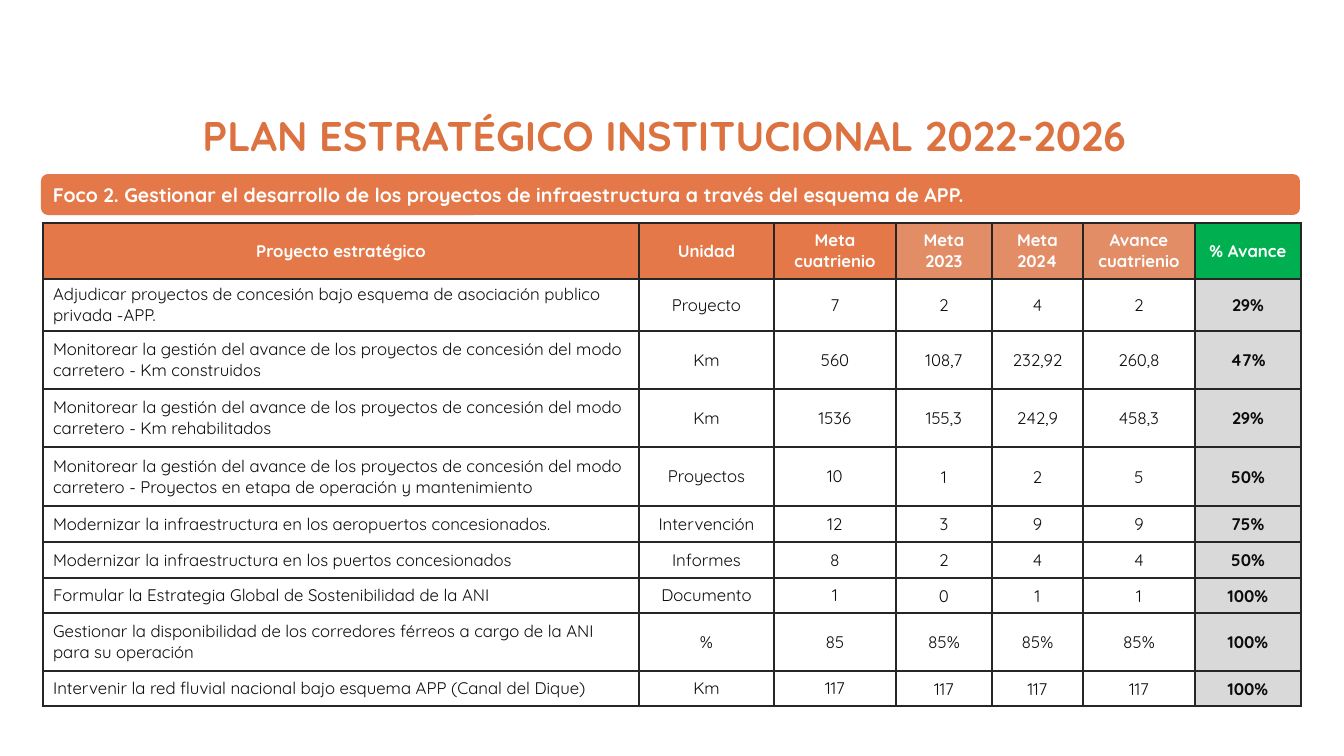
from lxml.etree import SubElement
from pptx import Presentation
from pptx.dml.color import RGBColor
from pptx.enum.shapes import MSO_SHAPE as Preset
from pptx.enum.text import MSO_ANCHOR as Anchor, MSO_AUTO_SIZE as AutoSize, PP_ALIGN as Align
from pptx.oxml.ns import qn
from pptx.util import Pt

ORANGE = RGBColor(0xE5, 0x78, 0x48)
LIGHT_ORANGE = RGBColor(0xE3, 0x8D, 0x67)
TITLE_ORANGE = RGBColor(0xDC, 0x72, 0x40)
GREEN = RGBColor(0x00, 0xB0, 0x50)
GREY = RGBColor(0xD9, 0xD9, 0xD9)
WHITE = RGBColor(0xFF, 0xFF, 0xFF)
INK = RGBColor(0x0C, 0x0C, 0x0C)
BORDER = RGBColor(0x26, 0x26, 0x26)

TITLE = "PLAN ESTRATÉGICO INSTITUCIONAL 2022-2026"
FOCUS = "Foco 2. Gestionar el desarrollo de los proyectos de infraestructura a través del esquema de APP."
COLUMNS = [
    ("Proyecto estratégico", 596, ORANGE),
    ("Unidad", 135, ORANGE),
    ("Meta cuatrienio", 122, ORANGE),
    ("Meta 2023", 96, LIGHT_ORANGE),
    ("Meta 2024", 91, LIGHT_ORANGE),
    ("Avance cuatrienio", 112, LIGHT_ORANGE),
    ("% Avance", 106, GREEN),
]
PROJECTS = [
    ("Adjudicar proyectos de concesión bajo esquema de asociación publico privada -APP.",
     "Proyecto", "7", "2", "4", "2", "29%"),
    ("Monitorear la gestión del avance de los proyectos de concesión del modo carretero - Km construidos",
     "Km", "560", "108,7", "232,92", "260,8", "47%"),
    ("Monitorear la gestión del avance de los proyectos de concesión del modo carretero - Km rehabilitados",
     "Km", "1536", "155,3", "242,9", "458,3", "29%"),
    ("Monitorear la gestión del avance de los proyectos de concesión del modo carretero - "
     "Proyectos en etapa de operación y mantenimiento",
     "Proyectos", "10", "1", "2", "5", "50%"),
    ("Modernizar la infraestructura en los aeropuertos concesionados.",
     "Intervención", "12", "3", "9", "9", "75%"),
    ("Modernizar la infraestructura en los puertos concesionados",
     "Informes", "8", "2", "4", "4", "50%"),
    ("Formular la Estrategia Global de Sostenibilidad de la ANI",
     "Documento", "1", "0", "1", "1", "100%"),
    ("Gestionar la disponibilidad de los corredores férreos a cargo de la ANI para su operación",
     "%", "85", "85%", "85%", "85%", "100%"),
    ("Intervenir la red fluvial nacional bajo esquema APP (Canal del Dique)",
     "Km", "117", "117", "117", "117", "100%"),
]
ROW_HEIGHTS = [56, 52, 58, 58, 59, 36, 36, 35, 58, 35]
TITLE_BOX = (128, 100, 1074, 77)
FOCUS_BOX = (41, 174, 1259, 41)
TABLE_CORNER = (43, 223)
FIRST_TIGHT_COLUMN = 3


def px(length):
    """Convert px to EMU."""
    return round(length * 914400 / 100.8)


def write(frame, text, size, color, bold, align):
    """Put one formatted paragraph into a text frame."""
    frame.text = text
    paragraph = frame.paragraphs[0]
    paragraph.alignment = align
    font = paragraph.runs[0].font
    for name, value in {"name": "Quicksand", "size": Pt(size), "bold": bold}.items():
        setattr(font, name, value)
    font.color.rgb = color
    return paragraph


def draw_borders(cell):
    """Give a cell a thin line on every side."""
    properties = cell._tc.get_or_add_tcPr()
    for side in ("lnL", "lnR", "lnT", "lnB"):
        line = SubElement(properties, qn(f"a:{side}"), w=str(Pt(1)))
        fill = SubElement(line, qn("a:solidFill"))
        SubElement(fill, qn("a:srgbClr"), val=str(BORDER))


def add_title(slide):
    """Place the slide title."""
    title = slide.shapes.title
    title.left, title.top, title.width, title.height = map(px, TITLE_BOX)
    frame = title.text_frame
    paragraph = write(frame, TITLE, 29.6, TITLE_ORANGE, True, Align.CENTER)
    paragraph.line_spacing = 0.9
    for name, value in {"word_wrap": True, "auto_size": AutoSize.NONE,
                        "vertical_anchor": Anchor.MIDDLE}.items():
        setattr(frame, name, value)


def add_focus(slide):
    """Draw the rounded focus banner."""
    banner = slide.shapes.add_shape(Preset.ROUNDED_RECTANGLE, *map(px, FOCUS_BOX))
    banner.shadow.inherit = False
    banner.fill.solid()
    banner.fill.fore_color.rgb = ORANGE
    banner.line.fill.background()
    banner.text_frame.vertical_anchor = Anchor.MIDDLE
    write(banner.text_frame, FOCUS, 14, WHITE, True, Align.LEFT)


def add_projects(slide):
    """Build the table of strategic projects."""
    headings, widths, heading_fills = zip(*COLUMNS)
    rows = [headings, *PROJECTS]
    size = (sum(widths), sum(ROW_HEIGHTS))
    table = slide.shapes.add_table(len(rows), len(COLUMNS), *map(px, TABLE_CORNER + size)).table
    table.first_row = table.horz_banding = False
    for column, width in zip(table.columns, widths):
        column.width = px(width)
    for row, height in zip(table.rows, ROW_HEIGHTS):
        row.height = px(height)
    last = len(COLUMNS) - 1
    for r, values in enumerate(rows):
        for c, value in enumerate(values):
            cell = table.cell(r, c)
            heading = r == 0
            align = Align.LEFT if c == 0 and not heading else Align.CENTER
            write(cell.text_frame, value, 12, WHITE if heading else INK, heading or c == last, align)
            cell.vertical_anchor = Anchor.MIDDLE
            if not heading and c >= FIRST_TIGHT_COLUMN:
                for side, margin in {"left": 1, "right": 1, "top": 1, "bottom": 0}.items():
                    setattr(cell, f"margin_{side}", px(margin))
            draw_borders(cell)
            cell.fill.solid()
            body_fill = GREY if c == last else WHITE
            cell.fill.fore_color.rgb = heading_fills[c] if heading else body_fill


def main():
    """Build and save the slide."""
    presentation = Presentation()
    presentation.slide_width, presentation.slide_height = px(1344), px(756)
    slide = presentation.slides.add_slide(presentation.slide_layouts[5])
    add_projects(slide)
    add_focus(slide)
    add_title(slide)
    presentation.save("out.pptx")


if __name__ == "__main__":
    main()
